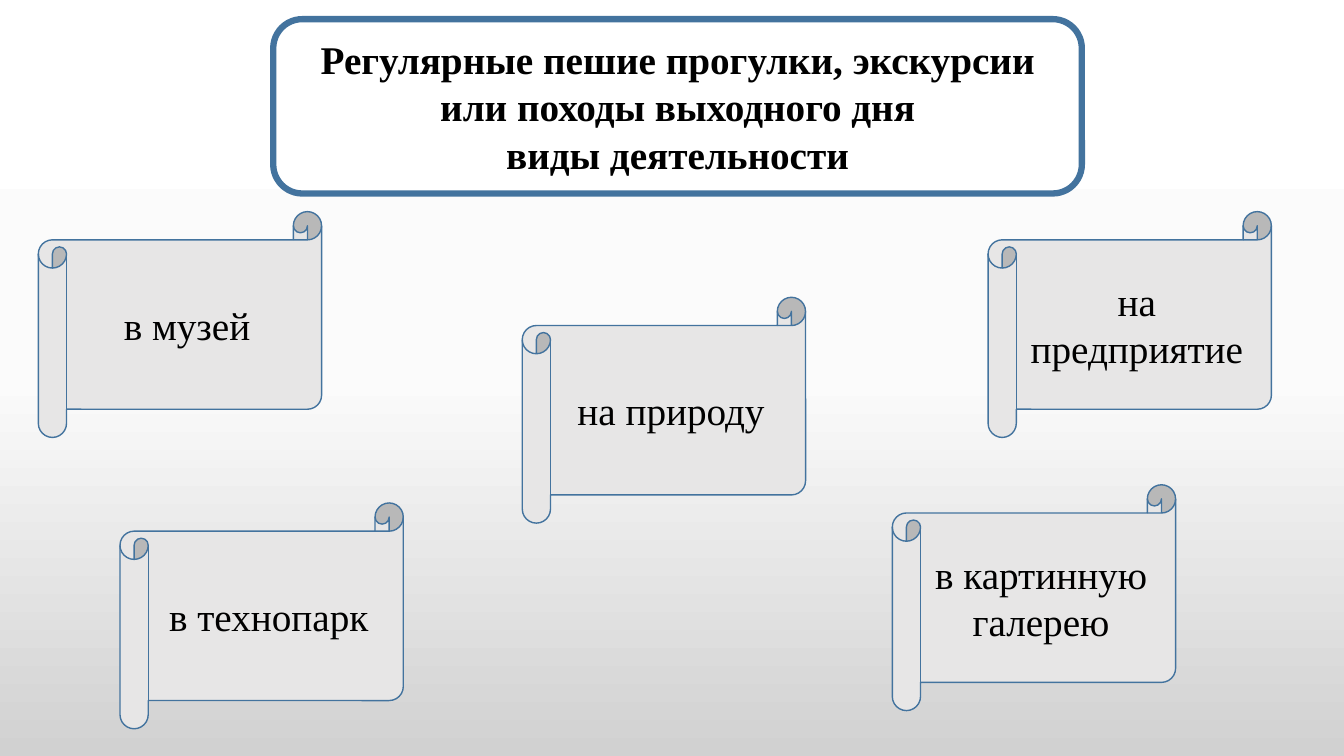
import copy

import pptx
import pptx.util
import pptx.dml.color
import pptx.enum.shapes
import pptx.enum.text

RGBColor = pptx.dml.color.RGBColor
Shapes = pptx.enum.shapes.MSO_SHAPE
Inches = pptx.util.Inches

TITLE = [
    "Регулярные пешие прогулки, экскурсии или походы выходного дня",
    "виды деятельности",
]
TITLE_BOX = (2.71, 0.19, 8.02, 1.73)
DESTINATIONS = [
    ("в музей", 0.38, 2.1),
    ("в технопарк", 1.19, 4.99),
    ("на природу", 5.18, 2.95),
    ("в картинную галерею", 8.85, 4.81),
    ("на предприятие", 9.8, 2.1),
]
SCROLL_SIZE = (2.81, 2.24)

WHITE = RGBColor(0xFF, 0xFF, 0xFF)
BLACK = RGBColor(0, 0, 0)
PAPER = RGBColor(0xE7, 0xE6, 0xE6)
OUTLINE = RGBColor(0x43, 0x73, 0x9E)
BACKDROP = [
    (0, WHITE),
    (0.5, RGBColor(0xFB, 0xFB, 0xFB)),
    (1, RGBColor(0xD1, 0xD1, 0xD1)),
]


def paint_background(slide):
    fill = slide.background.fill
    fill.gradient()
    fill.gradient_angle = 270
    first_stop = slide.element.xpath(".//p:bg//a:gs")[0]
    first_stop.addnext(copy.deepcopy(first_stop))
    for stop, (position, color) in zip(fill.gradient_stops, BACKDROP):
        stop.position = position
        stop.color.rgb = color


def add_panel(slide, preset, box, lines, fill, line_width, bold):
    panel = slide.shapes.add_shape(preset, *map(Inches, box))
    panel.shadow.inherit = False
    panel.fill.solid()
    panel.fill.fore_color.rgb = fill
    panel.line.color.rgb = OUTLINE
    panel.line.width = pptx.util.Pt(line_width)
    frame = panel.text_frame
    frame.word_wrap = True
    frame.vertical_anchor = pptx.enum.text.MSO_ANCHOR.MIDDLE
    frame.text = "\n".join(lines)
    for paragraph in frame.paragraphs:
        paragraph.alignment = pptx.enum.text.PP_ALIGN.CENTER
        for run in paragraph.runs:
            run.font.name = "Times New Roman"
            run.font.size = pptx.util.Pt(28)
            run.font.bold = bold
            run.font.color.rgb = BLACK


def main():
    deck = pptx.Presentation()
    deck.slide_width = Inches(13.33)
    deck.slide_height = Inches(7.5)
    slide = deck.slides.add_slide(deck.slide_layouts[6])
    paint_background(slide)
    add_panel(slide, Shapes.ROUNDED_RECTANGLE, TITLE_BOX, TITLE, WHITE, 4.5, True)
    for destination, left, top in DESTINATIONS:
        box = (left, top, *SCROLL_SIZE)
        add_panel(slide, Shapes.HORIZONTAL_SCROLL, box, [destination], PAPER, 1, False)
    deck.save("out.pptx")


if __name__ == "__main__":
    main()
